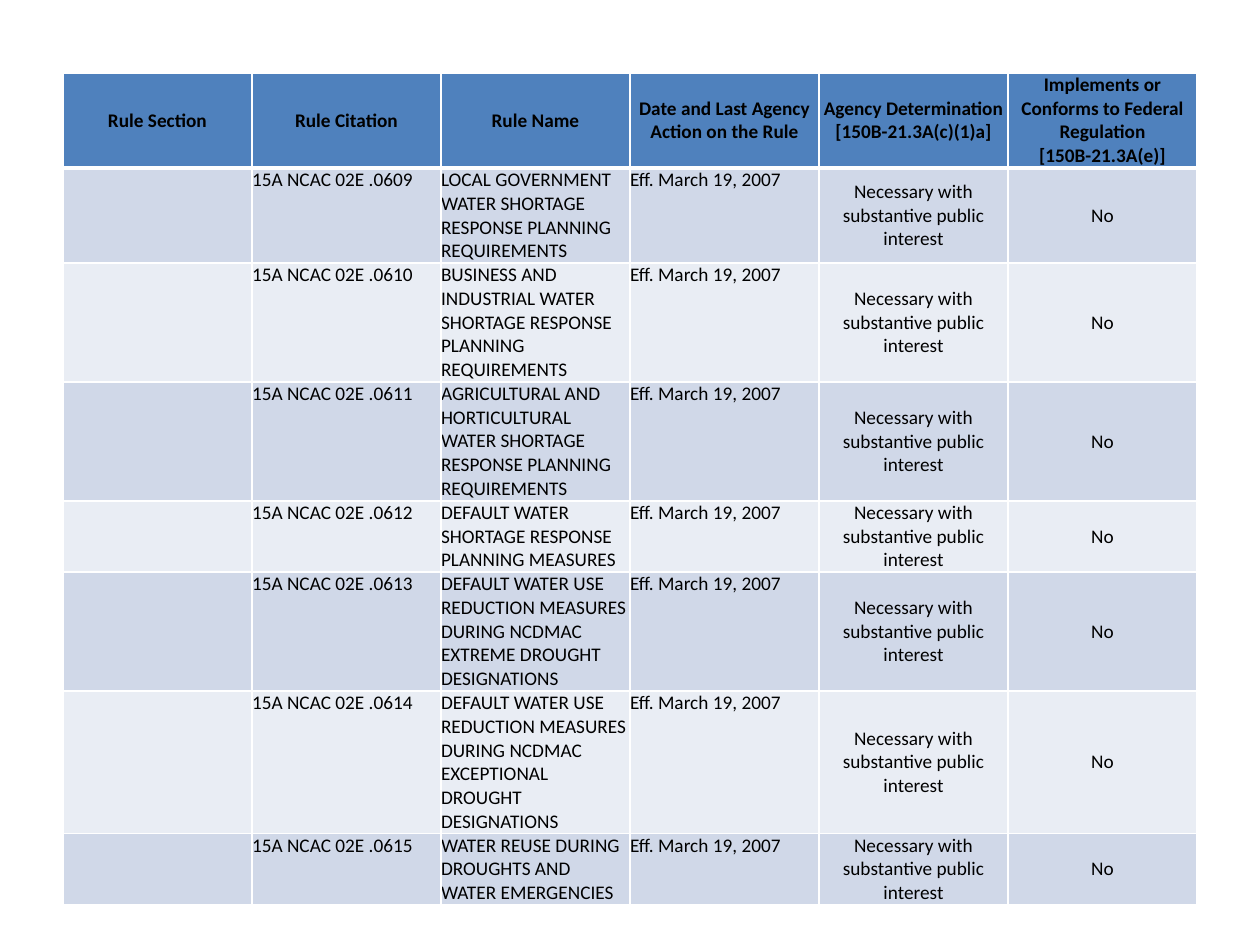
from lxml import etree
from pptx import Presentation
from pptx.dml.color import RGBColor
from pptx.enum.text import MSO_ANCHOR, PP_ALIGN
from pptx.oxml.ns import qn
from pptx.util import Cm, Pt

TOP, MIDDLE = MSO_ANCHOR.TOP, MSO_ANCHOR.MIDDLE
LEFT, CENTER = PP_ALIGN.LEFT, PP_ALIGN.CENTER

BLACK, WHITE = "000000", "FFFFFF"
HEADER_FILL = "4F81BD"
BAND_FILLS = ("D0D8E8", "E9EDF4")
ROW_HEIGHT = 1.04
NO_MARGINS = dict.fromkeys(
    ("margin_left", "margin_top", "margin_right", "margin_bottom"), 0)

HEADERS = (
    "Rule Section",
    "Rule Citation",
    "Rule Name",
    "Date and Last Agency Action on the Rule",
    "Agency Determination [150B-21.3A(c)(1)a]",
    "Implements or Conforms to Federal Regulation [150B-21.3A(e)]",
)
RULES = (
    ("0609", "LOCAL GOVERNMENT WATER SHORTAGE RESPONSE PLANNING REQUIREMENTS"),
    ("0610", "BUSINESS AND INDUSTRIAL WATER SHORTAGE RESPONSE PLANNING REQUIREMENTS"),
    ("0611", "AGRICULTURAL AND HORTICULTURAL WATER SHORTAGE RESPONSE PLANNING REQUIREMENTS"),
    ("0612", "DEFAULT WATER SHORTAGE RESPONSE PLANNING MEASURES"),
    ("0613", "DEFAULT WATER USE REDUCTION MEASURES DURING NCDMAC EXTREME DROUGHT DESIGNATIONS"),
    ("0614", "DEFAULT WATER USE REDUCTION MEASURES DURING NCDMAC EXCEPTIONAL DROUGHT DESIGNATIONS"),
    ("0615", "WATER REUSE DURING DROUGHTS AND WATER EMERGENCIES"),
)


def color(hex_string):
    return RGBColor.from_string(hex_string)


def set_attributes(target, values):
    for name, value in values.items():
        setattr(target, name, value)


def add_borders(cell, bottom_width):
    """Draw white cell borders; call before the fill, which must follow them in the XML."""
    properties = cell._tc.get_or_add_tcPr()
    widths = {"a:lnL": 1, "a:lnR": 1, "a:lnT": 1, "a:lnB": bottom_width}
    for tag, width in widths.items():
        line = etree.SubElement(properties, qn(tag), w=str(Pt(width)))
        fill = etree.SubElement(line, qn("a:solidFill"))
        etree.SubElement(fill, qn("a:srgbClr"), val=WHITE)


def write_text(cell, text, centered, bold):
    set_attributes(cell, NO_MARGINS)
    cell.vertical_anchor = MIDDLE if centered else TOP
    paragraph = cell.text_frame.paragraphs[0]
    paragraph.alignment = CENTER if centered else LEFT
    run = paragraph.add_run()
    run.text = text
    set_attributes(run.font, {"name": "Calibri", "size": Pt(11), "bold": bold})
    run.font.color.rgb = color(BLACK)


def add_rules_table(slide, left, top, width, height):
    records = [HEADERS] + [
        ("", f"15A NCAC 02E .{number}", name, "Eff. March 19, 2007",
         "Necessary with substantive public interest", "No")
        for number, name in RULES
    ]
    shape = slide.shapes.add_table(
        len(records), len(HEADERS), Cm(left), Cm(top), Cm(width), Cm(height))
    table = shape.table
    for column in table.columns:
        column.width = Cm(width / len(HEADERS))
    for row_index, record in enumerate(records):
        is_header = row_index == 0
        # Rows grow from this minimum to fit their text.
        table.rows[row_index].height = Cm(ROW_HEIGHT)
        fill = HEADER_FILL if is_header else BAND_FILLS[(row_index - 1) % 2]
        for column_index, text in enumerate(record):
            cell = table.cell(row_index, column_index)
            add_borders(cell, bottom_width=3 if is_header else 1)
            cell.fill.solid()
            cell.fill.fore_color.rgb = color(fill)
            if text:
                write_text(cell, text, is_header or column_index >= 4, is_header)
    shape.height = Cm(height)


def main():
    presentation = Presentation()
    presentation.slide_width, presentation.slide_height = Cm(25.4), Cm(19.05)
    slide = presentation.slides.add_slide(presentation.slide_layouts[6])
    add_rules_table(slide, left=1.27, top=1.47, width=22.86, height=16.31)
    presentation.save("out.pptx")


if __name__ == "__main__":
    main()
